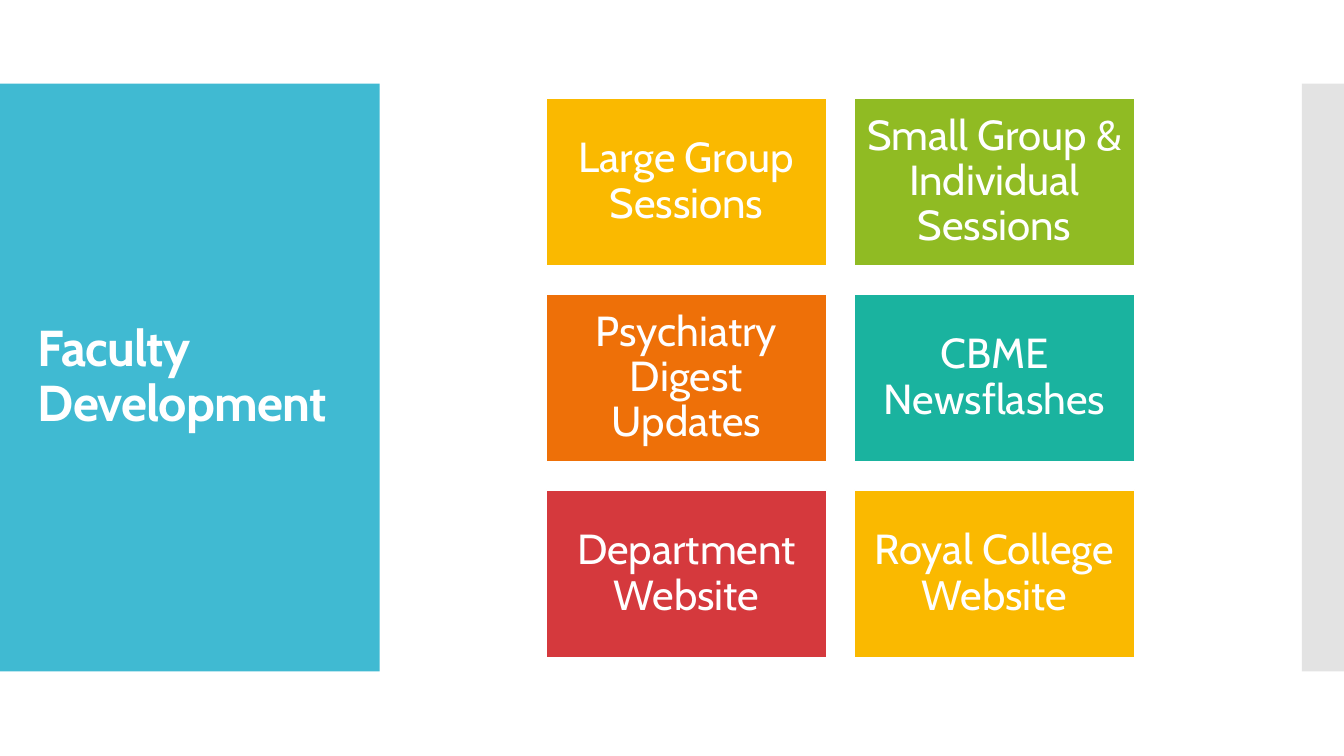
from pptx import Presentation
from pptx.dml.color import RGBColor
from pptx.enum.shapes import MSO_SHAPE
from pptx.enum.text import MSO_ANCHOR, PP_ALIGN
from pptx.oxml.ns import qn
from pptx.util import Pt
from lxml.etree import SubElement

WHITE = RGBColor(0xFF, 0xFF, 0xFF)
BLUE = RGBColor(0x40, 0xBA, 0xD2)
GREY = RGBColor(0xC8, 0xC8, 0xC8)
YELLOW = RGBColor(0xFA, 0xB9, 0x00)
GREEN = RGBColor(0x90, 0xBB, 0x23)
ORANGE = RGBColor(0xEE, 0x70, 0x08)
TEAL = RGBColor(0x1A, 0xB3, 0x9F)
RED = RGBColor(0xD5, 0x39, 0x3D)

FONT = "Cabin"
SLIDE_WIDTH, SLIDE_HEIGHT = 960, 540
BAND_TOP, BAND_HEIGHT = 59.8, 419.8
PANEL_WIDTH, STRIP_WIDTH = 271.2, 30

COLUMNS = 2
GRID_LEFT, GRID_TOP = 390.4, 70
CARD_WIDTH, CARD_HEIGHT = 200, 120
COLUMN_STEP, ROW_STEP = 220, 140
CARD_INSET = 8.5

CARDS = [
    ("Large Group Sessions", YELLOW),
    ("Small Group & Individual Sessions", GREEN),
    ("Psychiatry Digest Updates", ORANGE),
    ("CBME Newsflashes", TEAL),
    ("Department Website", RED),
    ("Royal College Website", YELLOW),
]


def add_rectangle(slide, left, top, width, height, color):
    shape = slide.shapes.add_shape(
        MSO_SHAPE.RECTANGLE, Pt(left), Pt(top), Pt(width), Pt(height))
    shape.shadow.inherit = False
    shape.fill.solid()
    shape.fill.fore_color.rgb = color
    shape.line.fill.background()
    return shape


def set_opacity(shape, percent):
    color = shape.fill._xPr.find(qn("a:solidFill"))[0]
    SubElement(color, qn("a:alpha")).set("val", str(percent * 1000))


def write_text(shape, text, size, alignment, bold=False):
    """Fill the shape with one white, vertically centred paragraph."""
    frame = shape.text_frame
    frame.word_wrap = True
    frame.vertical_anchor = MSO_ANCHOR.MIDDLE
    frame.text = text
    paragraph = frame.paragraphs[0]
    paragraph.alignment = alignment
    paragraph.line_spacing = 0.9
    run = paragraph.runs[0]
    run.font.name = FONT
    run.font.size = Pt(size)
    run.font.bold = bold
    run.font.color.rgb = WHITE
    return run


def add_title(slide, text):
    box = slide.shapes.add_textbox(Pt(20), Pt(88.6), Pt(232), Pt(362))
    run = write_text(box, text, 36, PP_ALIGN.LEFT, bold=True)
    run.font._element.set("spc", "-60")


def add_card(slide, index, text, color):
    row, column = divmod(index, COLUMNS)
    card = add_rectangle(
        slide, GRID_LEFT + column * COLUMN_STEP, GRID_TOP + row * ROW_STEP,
        CARD_WIDTH, CARD_HEIGHT, color)
    card.line.color.rgb = WHITE
    card.line.width = Pt(0.85)
    frame = card.text_frame
    frame.margin_left = frame.margin_right = Pt(CARD_INSET)
    frame.margin_top = frame.margin_bottom = Pt(CARD_INSET)
    write_text(card, text, 30, PP_ALIGN.CENTER)


def main():
    presentation = Presentation()
    presentation.slide_width = Pt(SLIDE_WIDTH)
    presentation.slide_height = Pt(SLIDE_HEIGHT)
    slide = presentation.slides.add_slide(presentation.slide_layouts[6])

    add_rectangle(slide, 0, BAND_TOP, PANEL_WIDTH, BAND_HEIGHT, BLUE)
    strip = add_rectangle(slide, SLIDE_WIDTH - STRIP_WIDTH, BAND_TOP,
                          STRIP_WIDTH, BAND_HEIGHT, GREY)
    set_opacity(strip, 50)
    add_title(slide, "Faculty Development")
    for index, (text, color) in enumerate(CARDS):
        add_card(slide, index, text, color)

    presentation.save("out.pptx")


if __name__ == "__main__":
    main()
